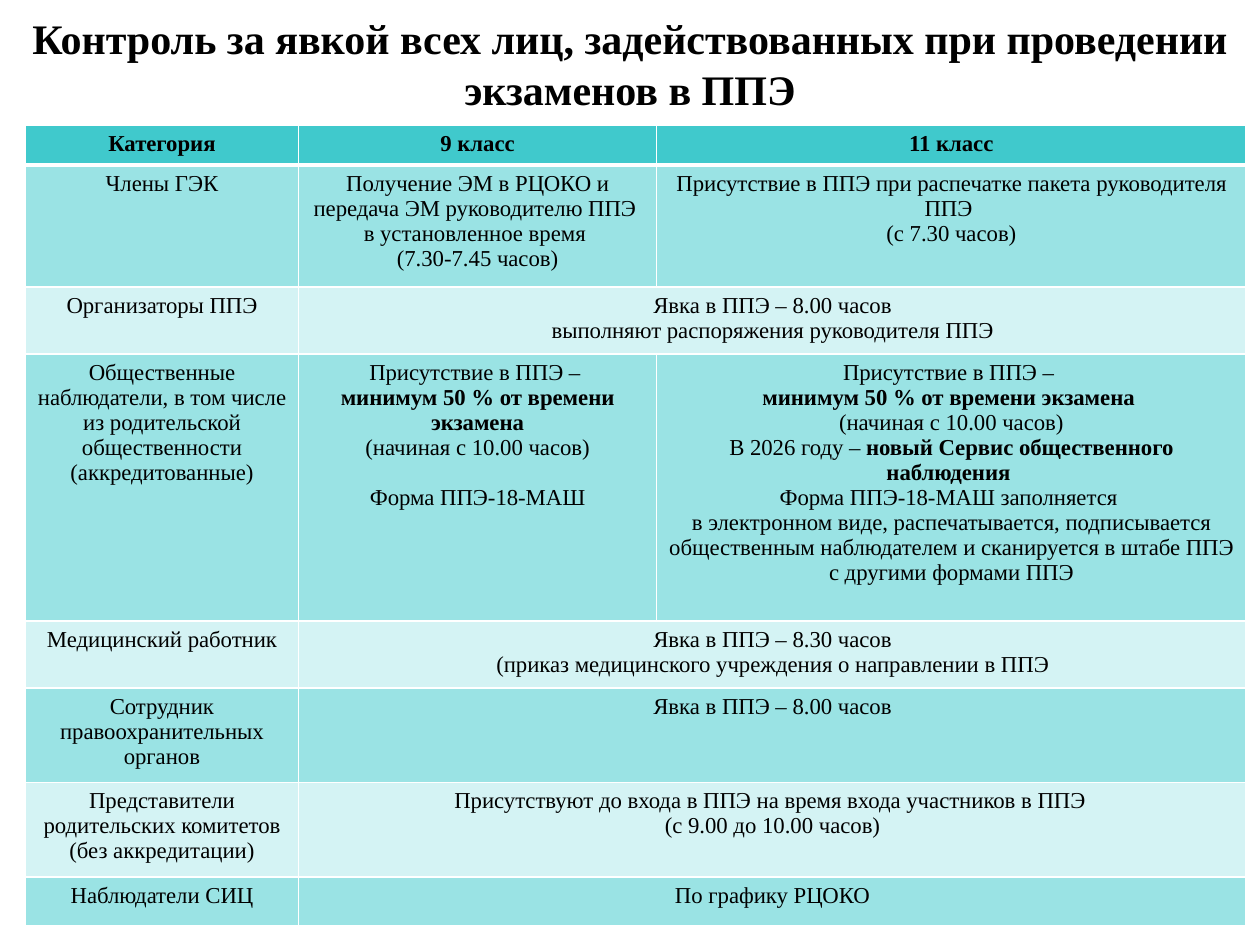
from lxml import etree
from pptx import Presentation
from pptx.dml.color import RGBColor
from pptx.enum.text import MSO_ANCHOR, PP_ALIGN
from pptx.oxml.ns import qn
from pptx.util import Inches, Pt

FONT = "Times New Roman"
TEXT_SIZE = 13
HEADER, DARK_BAND, LIGHT_BAND = "40C9CC", "9AE3E4", "D4F3F4"
BLANK_LINE = Pt(14.3)


def color(hex_string):
    return RGBColor.from_string(hex_string)


def add_text(para, text, size, bold=False):
    """Add centred text: ** switches bold on and off, a newline breaks the line."""
    para.alignment = PP_ALIGN.CENTER
    for part_index, part in enumerate(text.split("**")):
        for line_index, line in enumerate(part.split("\n")):
            if line_index:
                para.add_line_break()
                line_break = para._p.findall(qn("a:br"))[-1]
                etree.SubElement(line_break, qn("a:rPr"), sz=str(size * 100))
            if line:
                span = para.add_run()
                span.text = line
                span.font.name = FONT
                span.font.size = Pt(size)
                span.font.bold = bold or part_index % 2 == 1
                span.font.color.rgb = color("000000")


# Each cell is a list of paragraphs; a row of two cells merges columns 2 and 3.
rows = [
    (0.32, [["Категория"], ["9 класс"], ["11 класс"]]),
    (0.97, [
        ["Члены ГЭК"],
        ["Получение ЭМ в РЦОКО и передача ЭМ руководителю ППЭ \n"
         "в установленное время \n(7.30-7.45 часов)"],
        ["Присутствие в ППЭ при распечатке пакета руководителя ППЭ ",
         "(с 7.30 часов)"],
    ]),
    (0.53, [
        ["Организаторы ППЭ"],
        ["Явка в ППЭ – 8.00 часов", "выполняют распоряжения руководителя ППЭ"],
    ]),
    (2.12, [
        ["Общественные наблюдатели, в том числе из родительской "
         "общественности (аккредитованные)"],
        ["Присутствие в ППЭ – \n**минимум 50 % от времени экзамена\n**"
         "(начиная с 10.00 часов)",
         "Форма ППЭ-18-МАШ"],
        ["Присутствие в ППЭ – \n**минимум 50 % от времени экзамена \n**"
         "(начиная с 10.00 часов)",
         "В 2026 году – **новый Сервис общественного наблюдения **",
         "Форма ППЭ-18-МАШ заполняется \nв электронном виде, распечатывается, "
         "подписывается общественным наблюдателем и сканируется в штабе ППЭ "
         "с другими формами ППЭ"],
    ]),
    (0.53, [
        ["Медицинский работник"],
        ["Явка в ППЭ – 8.30 часов",
         "(приказ медицинского учреждения о направлении в ППЭ"],
    ]),
    (0.75, [["Сотрудник правоохранительных органов"], ["Явка в ППЭ – 8.00 часов"]]),
    (0.75, [
        ["Представители родительских комитетов (без аккредитации)"],
        ["Присутствуют до входа в ППЭ на время входа участников в ППЭ ",
         "(с 9.00 до 10.00 часов)"],
    ]),
    (0.39, [["Наблюдатели СИЦ"], ["По графику РЦОКО"]]),
]
column_widths = [2.17, 2.84, 4.68]

deck = Presentation()
deck.slide_width, deck.slide_height = Inches(10), Inches(7.5)
page = deck.slides.add_slide(deck.slide_layouts[5])

title = page.shapes.title
title.left, title.top = Inches(0.14), Inches(0.17)
title.width, title.height = Inches(9.72), Inches(0.66)
title.text_frame.word_wrap = True
title.text_frame.vertical_anchor = MSO_ANCHOR.MIDDLE
add_text(title.text_frame.paragraphs[0],
         "Контроль за явкой всех лиц, задействованных при проведении экзаменов в ППЭ",
         24, bold=True)

table = page.shapes.add_table(
    len(rows), len(column_widths), Inches(0.2), Inches(0.99),
    Inches(sum(column_widths)), Inches(sum(height for height, _ in rows))).table
for column, width in zip(table.columns, column_widths):
    column.width = Inches(width)

for row_index, (height, contents) in enumerate(rows):
    table.rows[row_index].height = Inches(height)
    if row_index == 0:
        band = HEADER
    else:
        band = DARK_BAND if row_index % 2 else LIGHT_BAND

    for column_index in range(len(column_widths)):
        cell = table.cell(row_index, column_index)
        properties = cell._tc.get_or_add_tcPr()
        for side in ("lnL", "lnR", "lnT", "lnB"):
            under_header = (row_index, side) in ((0, "lnB"), (1, "lnT"))
            border = etree.SubElement(properties, qn(f"a:{side}"),
                                      w=str(Pt(3 if under_header else 1)))
            line_fill = etree.SubElement(border, qn("a:solidFill"))
            etree.SubElement(line_fill, qn("a:srgbClr"), val="FFFFFF")
        cell.fill.solid()
        cell.fill.fore_color.rgb = color(band)

    if len(contents) == 2:
        table.cell(row_index, 1).merge(table.cell(row_index, 2))
    for column_index, paragraphs in enumerate(contents):
        frame = table.cell(row_index, column_index).text_frame
        for para_index, text in enumerate(paragraphs):
            para = frame.add_paragraph() if para_index else frame.paragraphs[0]
            add_text(para, text, TEXT_SIZE, bold=row_index == 0)

# The form number stands one line below the attendance rule.
table.cell(3, 1).text_frame.paragraphs[1].space_before = BLANK_LINE

deck.save("out.pptx")
